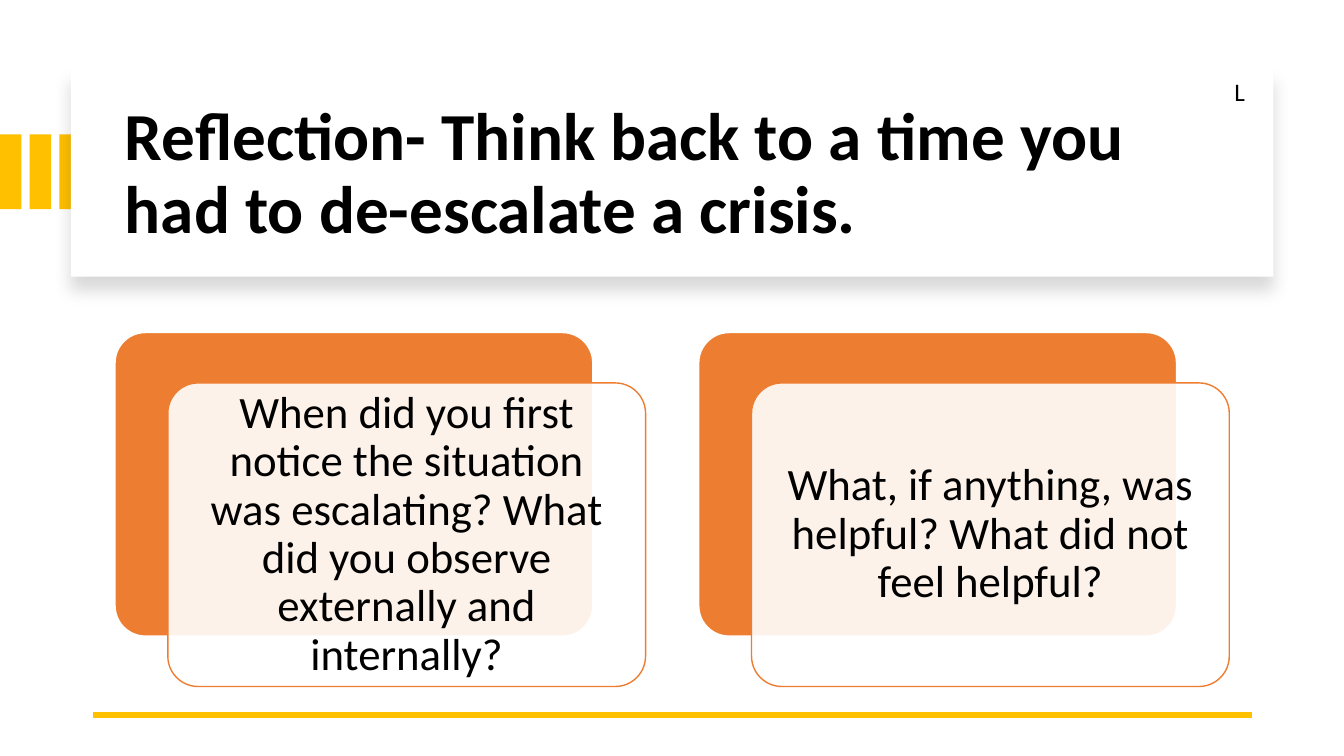
from lxml.etree import SubElement
from pptx import Presentation
from pptx.dml.color import RGBColor
from pptx.enum.shapes import MSO_CONNECTOR, MSO_SHAPE
from pptx.enum.text import MSO_ANCHOR as Anchor, MSO_AUTO_SIZE as AutoSize, PP_ALIGN as Align
from pptx.oxml.ns import qn
from pptx.util import Cm, Pt

BLACK = RGBColor(0x00, 0x00, 0x00)
WHITE = RGBColor(0xFF, 0xFF, 0xFF)
GOLD = RGBColor(0xFF, 0xC0, 0x00)
ORANGE = RGBColor(0xED, 0x7D, 0x31)

QUESTIONS = (
    "When did you first notice the situation was escalating? "
    "What did you observe externally and internally?",
    "What, if anything, was helpful? What did not feel helpful?",
)


def add_block(slide, preset, left, top, width, height, fill, outline=None):
    """Add a filled shape with an optional thin outline."""
    block = slide.shapes.add_shape(preset, Cm(left), Cm(top), Cm(width), Cm(height))
    block.shadow.inherit = False
    block.fill.solid()
    block.fill.fore_color.rgb = fill
    if outline is None:
        block.line.fill.background()
    else:
        block.line.color.rgb = outline
        block.line.width = Pt(1)
    return block


def write_text(frame, text, size, bold=False, align=Align.LEFT, spacing=0.9):
    """Fill a text frame with one black paragraph."""
    frame.word_wrap = True
    paragraph = frame.paragraphs[0]
    paragraph.text = text
    paragraph.alignment = align
    paragraph.line_spacing = spacing
    paragraph.font.name = "Calibri"
    paragraph.font.size = Pt(size)
    paragraph.font.bold = bold
    paragraph.font.color.rgb = BLACK


def add_label(slide, left, top, width, height):
    """Add a text box and return its text frame."""
    return slide.shapes.add_textbox(Cm(left), Cm(top), Cm(width), Cm(height)).text_frame


def add_drop_shadow(block):
    """Give a shape a soft shadow falling straight down."""
    effects = block._element.spPr.find(qn("a:effectLst"))
    shadow = SubElement(effects, qn("a:outerShdw"), blurRad=str(Pt(11)),
                        dist=str(Pt(10)), dir="5400000", algn="t", rotWithShape="0")
    tint = SubElement(shadow, qn("a:srgbClr"), val=str(BLACK))
    SubElement(tint, qn("a:alpha"), val="15000")


def add_rule(slide, start, end, y):
    """Add the thick gold line at the foot of the slide."""
    rule = slide.shapes.add_connector(MSO_CONNECTOR.STRAIGHT, Cm(start), Cm(y), Cm(end), Cm(y))
    rule.line.color.rgb = GOLD
    rule.line.width = Pt(4.5)
    SubElement(rule._element.spPr, qn("a:effectLst"))


def add_question_card(slide, left, question):
    """Add an orange card with a translucent question panel over it."""
    top, width, height = 8.38, 12.04, 7.65
    card = add_block(slide, MSO_SHAPE.ROUNDED_RECTANGLE, left, top, width, height, ORANGE, WHITE)
    panel = add_block(slide, MSO_SHAPE.ROUNDED_RECTANGLE, left + 1.33, top + 1.27,
                      width, height, WHITE, ORANGE)
    card.adjustments[0] = panel.adjustments[0] = 0.1
    SubElement(panel.fill._xPr.find(qn("a:solidFill"))[0], qn("a:alpha"), val="90000")
    frame = panel.text_frame
    frame.margin_left = frame.margin_right = Cm(0.56)
    frame.margin_top = frame.margin_bottom = Cm(0.56)
    frame.vertical_anchor = Anchor.MIDDLE
    write_text(frame, question, 32, align=Align.CENTER)


def main():
    """Build the reflection slide."""
    deck = Presentation()
    deck.slide_width, deck.slide_height = Cm(33.87), Cm(19.05)
    slide = deck.slides.add_slide(deck.slide_layouts[6])

    for stripe in range(3):
        add_block(slide, MSO_SHAPE.RECTANGLE, stripe * 0.75, 3.39, 0.54, 1.88, GOLD)
    banner = add_block(slide, MSO_SHAPE.RECTANGLE, 1.79, 1.7, 30.3, 5.27, WHITE)
    add_drop_shadow(banner)

    title = add_label(slide, 2.9, 2.26, 28.27, 4.32)
    title.vertical_anchor = Anchor.MIDDLE
    write_text(title, "Reflection- Think back to a time you had to de-escalate a crisis.",
               48, bold=True)

    add_rule(slide, 31.55, 2.34, 18.01)
    for column, question in enumerate(QUESTIONS):
        add_question_card(slide, 2.9 + column * 14.71, question)

    initial = add_label(slide, 30.86, 1.8, 0.79, 1.02)
    initial.auto_size = AutoSize.SHAPE_TO_FIT_TEXT
    write_text(initial, "L", 18, spacing=1.0)

    deck.save("out.pptx")


if __name__ == "__main__":
    main()
